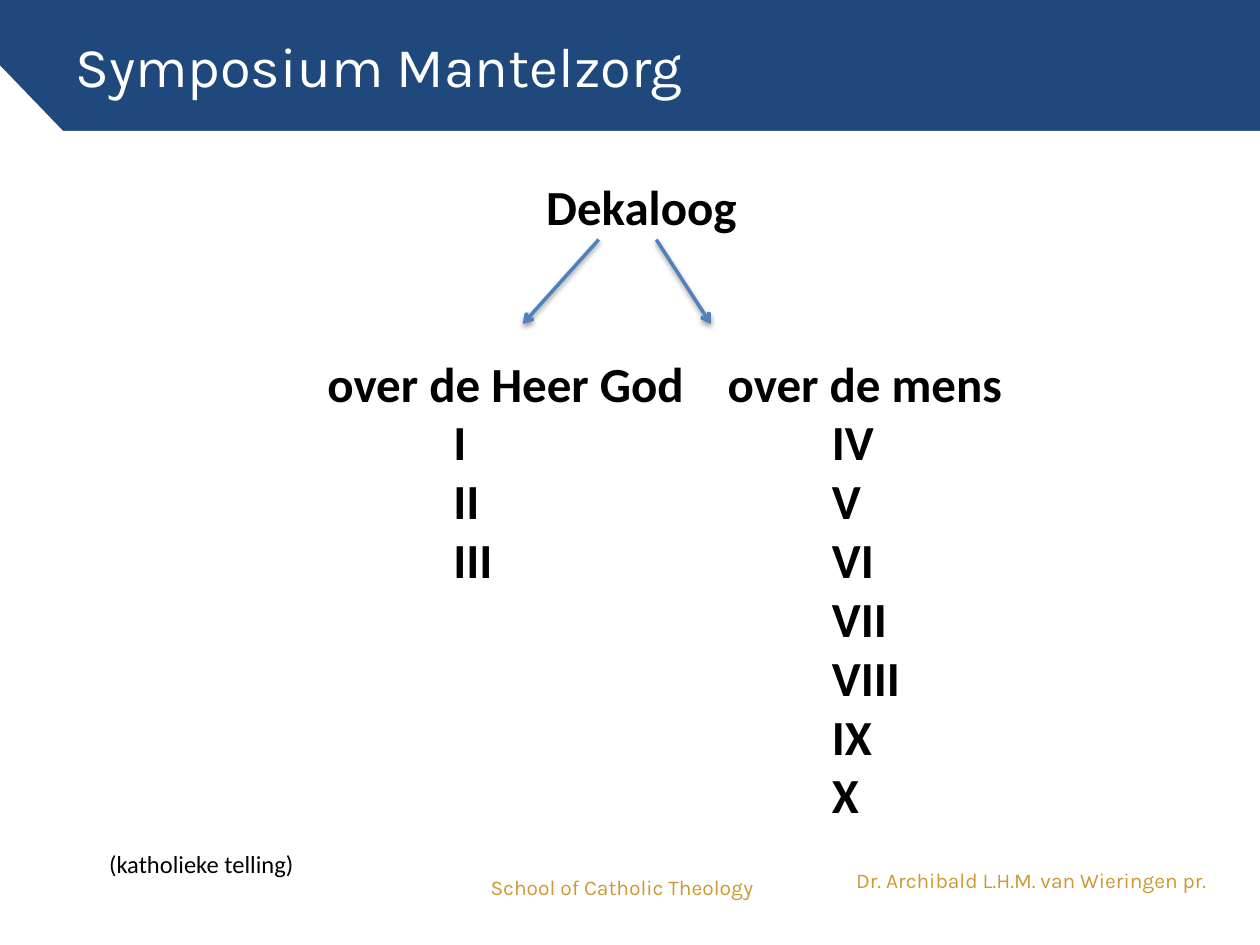
"""Build the symposium slide on the two parts of the Decalogue."""
from dataclasses import dataclass

from lxml import etree
from pptx import Presentation, util as u
from pptx.dml.color import RGBColor
from pptx.enum import text as t
from pptx.oxml import ns, parse_xml

Cm = u.Cm
NAVY, WHITE, BLACK, GOLD, BLUE = "1F497D", "FFFFFF", "000000", "CC9933", "4F81BD"
LEFT, MID, RIGHT = t.PP_ALIGN.LEFT, t.PP_ALIGN.CENTER, t.PP_ALIGN.RIGHT
HEAD = {"name": "Calibri", "size": u.Pt(28), "bold": True}
NOTE = {"name": "Calibri", "size": u.Pt(14), "bold": False}
FOOT = {"name": "Karla", "size": u.Pt(12), "bold": False}
TITLE = {"name": "Karla", "size": u.Pt(32), "bold": False}
SHADOW = (
    f'<a:effectLst {ns.nsdecls("a")}><a:outerShdw blurRad="39370" dist="20320" '
    'dir="5400000" rotWithShape="0"><a:srgbClr val="000000">'
    '<a:alpha val="38000"/></a:srgbClr></a:outerShdw></a:effectLst>'
)


@dataclass
class Label:
    """Lines of text in a box; lines after the first are indented."""
    lines: list[str]
    box: tuple[float, float, float, float]
    font: dict
    color: str = BLACK
    align: t.PP_ALIGN = LEFT
    anchor: t.MSO_ANCHOR = t.MSO_ANCHOR.TOP
    inset: float = 0
    indent: float = 0


@dataclass
class Arrow:
    """A straight arrow between two points."""
    start: tuple[float, float]
    end: tuple[float, float]


LABELS = [
    Label(["School of Catholic Theology"], (9.27, 17.37, 6.17, 1.02), FOOT, GOLD,
          RIGHT, t.MSO_ANCHOR.MIDDLE, 0.25),
    Label(["Dr. Archibald L.H.M. van Wieringen pr."], (16.71, 17.37, 7.87, 1.02),
          FOOT, GOLD, RIGHT, inset=0.25),
    Label(["Dekaloog"], (1.27, 3.56, 23.32, 1.19), HEAD, align=MID),
    Label(["over de Heer God", "I", "II", "III"], (6.6, 7.12, 7.6, 4.75), HEAD,
          indent=2.54),
    Label(["over de mens", "IV", "V", "VI", "VII", "VIII", "IX", "X"],
          (14.67, 7.12, 7, 9.5), HEAD, indent=2.1),
    Label(["(katholieke telling)"], (2.2, 17.12, 5, 0.6), NOTE),
]
ARROWS = [
    Arrow((12.07, 4.83), (10.54, 6.53)),
    Arrow((13.23, 4.83), (14.33, 6.53)),
]


def rgb(code: str) -> RGBColor:
    """Turn a hex string into a colour."""
    return RGBColor.from_string(code)


def put(obj, vals: dict) -> None:
    """Set each named attribute on an object."""
    for key, val in vals.items():
        setattr(obj, key, val)


def fill_text(shape, label: Label) -> None:
    """Place a shape and write its lines."""
    left, top, width, height = map(Cm, label.box)
    put(shape, {"left": left, "top": top, "width": width, "height": height})
    frame = shape.text_frame
    side, edge = Cm(label.inset), Cm(label.inset / 2)
    put(frame, {"word_wrap": True, "auto_size": t.MSO_AUTO_SIZE.NONE,
                "vertical_anchor": label.anchor, "margin_left": side,
                "margin_right": side, "margin_top": edge, "margin_bottom": edge})
    frame.text = "\n".join(label.lines)
    for num, para in enumerate(frame.paragraphs):
        para.alignment = label.align
        if num and label.indent:
            para._p.get_or_add_pPr().set("marL", str(Cm(label.indent)))
        font = para.runs[0].font
        put(font, label.font)
        font.color.rgb = rgb(label.color)


def draw_page(slide) -> None:
    """Paint the navy banner as background above a white page."""
    back = slide.background.fill
    back.solid()
    back.fore_color.rgb = rgb(NAVY)
    pts = [(0, 1.32), (0, 19.05), (25.4, 19.05), (25.4, 2.64)]
    path = slide.shapes.build_freeform(Cm(1.27), Cm(2.64))
    path.add_line_segments([(Cm(x), Cm(y)) for x, y in pts])
    page = path.convert_to_shape()
    page.shadow.inherit = False
    page.fill.solid()
    page.fill.fore_color.rgb = rgb(WHITE)
    page.line.fill.background()
    tree = slide.shapes._spTree
    tree.remove(page._element)
    tree.insert(2, page._element)


def draw_arrow(slide, arrow: Arrow) -> None:
    """Draw a blue arrow with a soft shadow."""
    ends = map(Cm, arrow.start + arrow.end)
    link = slide.shapes.add_connector(1, *ends)
    link.line.width = u.Pt(2)
    link.line.color.rgb = rgb(BLUE)
    etree.SubElement(link.line._get_or_add_ln(), ns.qn("a:tailEnd"), type="arrow")
    link._element.spPr.append(parse_xml(SHADOW))


def main() -> None:
    """Build and save the slide."""
    deck = Presentation()
    put(deck, {"slide_width": Cm(25.4), "slide_height": Cm(19.05)})
    slide = deck.slides.add_slide(deck.slide_layouts[5])
    draw_page(slide)
    fill_text(slide.shapes.title, Label(
        ["Symposium Mantelzorg"], (1.27, 0, 22.86, 2.64), TITLE, WHITE,
        anchor=t.MSO_ANCHOR.MIDDLE, inset=0.25))
    for label in LABELS:
        fill_text(slide.shapes.add_textbox(0, 0, 0, 0), label)
    for arrow in ARROWS:
        draw_arrow(slide, arrow)
    deck.save("out.pptx")


if __name__ == "__main__":
    main()
